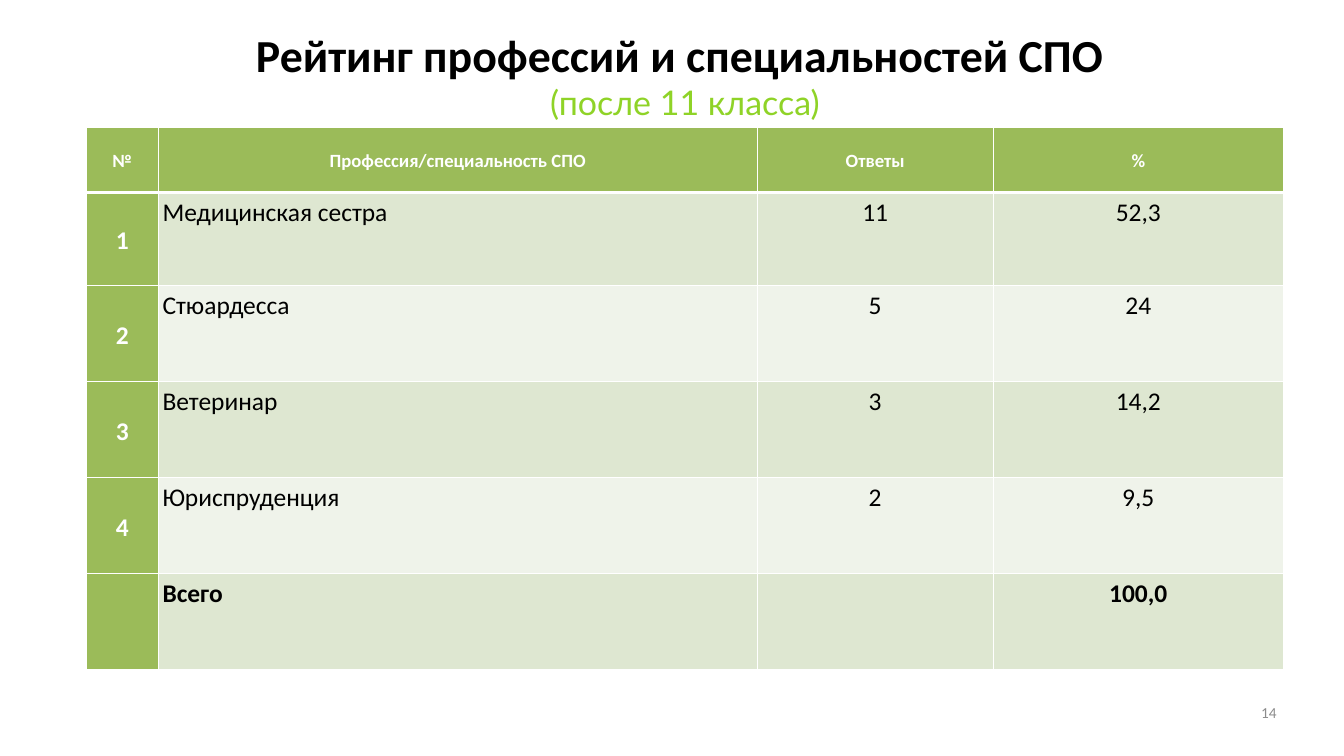
from dataclasses import dataclass

from lxml import etree
from pptx import Presentation
from pptx.dml.color import RGBColor as RGB
from pptx.enum.text import MSO_ANCHOR as ANCHOR, MSO_AUTO_SIZE as FIT, PP_ALIGN as ALIGN
from pptx.oxml.ns import qn
from pptx.util import Inches, Pt


@dataclass(frozen=True)
class Theme:
    font: str = "Calibri"
    accent_font: str = "Lato"
    black: str = "000000"
    white: str = "FFFFFF"
    lime: str = "8FD327"
    grey: str = "8C8C8C"
    green: str = "9BBB59"
    bands: tuple = ("DEE7D1", "EFF3EA")
    title: int = 54
    subtitle: int = 40
    head: int = 22
    body: int = 30
    number: int = 18
    rule: int = 1
    head_rule: int = 3


class RatingSlide:
    def __init__(self, prs, theme):
        self.theme = theme
        self.slide = prs.slides.add_slide(prs.slide_layouts[5])

    def place(self, sp, box):
        for name, value in zip(("left", "top", "width", "height"), box):
            setattr(sp, name, Inches(value))

    def frame(self, tf):
        fmt = dict(word_wrap=True, auto_size=FIT.NONE, vertical_anchor=ANCHOR.TOP,
                   margin_left=0, margin_top=0, margin_right=0, margin_bottom=0)
        for name, value in fmt.items():
            setattr(tf, name, value)

    def run(self, p, text, size, color, bold=False, font=None):
        r = p.add_run()
        r.text = text
        fmt = dict(name=font or self.theme.font, size=Pt(size), bold=bold)
        for name, value in fmt.items():
            setattr(r.font, name, value)
        r.font.color.rgb = RGB.from_string(color)

    def title(self, text, subtitle, box):
        t, sp = self.theme, self.slide.shapes.title
        self.place(sp, box)
        self.frame(sp.text_frame)
        p = sp.text_frame.paragraphs[0]
        p.alignment, p.line_spacing = ALIGN.CENTER, 1.0
        self.run(p, text, t.title, t.black, bold=True)
        p.add_line_break()
        self.run(p, subtitle, t.subtitle, t.lime, font=t.accent_font)

    def number(self, text, box):
        t = self.theme
        sp = self.slide.shapes.add_textbox(*map(Inches, box))
        self.frame(sp.text_frame)
        p = sp.text_frame.paragraphs[0]
        p.alignment = ALIGN.RIGHT
        self.run(p, text, t.number, t.grey)

    def border(self, cell, side, width):
        ln = etree.SubElement(cell._tc.get_or_add_tcPr(), qn(f"a:ln{side}"), w=str(Pt(width)))
        fill = etree.SubElement(ln, qn("a:solidFill"))
        etree.SubElement(fill, qn("a:srgbClr"), val=self.theme.white)

    def cell(self, cell, text, row, col, bold):
        t = self.theme
        head, green = row == 0, row == 0 or col == 0
        fmt = dict(margin_left=Inches(0.07), margin_right=Inches(0.07),
                   margin_top=0, margin_bottom=0,
                   vertical_anchor=ANCHOR.MIDDLE if green else ANCHOR.TOP)
        for name, value in fmt.items():
            setattr(cell, name, value)

        # Borders come before the fill in the cell properties
        thick = {"T": row == 1, "B": head}
        for side in "LRTB":
            self.border(cell, side, t.head_rule if thick.get(side) else t.rule)
        cell.fill.solid()
        fill = t.green if green else t.bands[(row - 1) % 2]
        cell.fill.fore_color.rgb = RGB.from_string(fill)

        p = cell.text_frame.paragraphs[0]
        p.alignment = ALIGN.LEFT if col == 1 and not head else ALIGN.CENTER
        p.line_spacing = 1.15
        if text:
            self.run(p, text, t.head if head else t.body,
                     t.white if green else t.black, bold=green or bold)

    def table(self, rows, box, widths, heights):
        sp = self.slide.shapes.add_table(len(rows), len(widths), *map(Inches, box))
        tbl = sp.table
        for column, width in zip(tbl.columns, widths):
            column.width = Inches(width)
        for line, height in zip(tbl.rows, heights):
            line.height = Inches(height)
        for i, values in enumerate(rows):
            for j, text in enumerate(values):
                self.cell(tbl.cell(i, j), text, i, j, bold=i == len(rows) - 1)


RATING = [
    ("№", "Профессия/специальность СПО", "Ответы", "%"),
    ("1", "Медицинская сестра", "11", "52,3"),
    ("2", "Стюардесса", "5", "24"),
    ("3", "Ветеринар", "3", "14,2"),
    ("4", "Юриспруденция", "2", "9,5"),
    ("", "Всего", "", "100,0"),
]


def main():
    prs = Presentation()
    prs.slide_width, prs.slide_height = Inches(21.99), Inches(12.37)
    s = RatingSlide(prs, Theme())

    # Heading
    s.title("Рейтинг профессий и специальностей СПО ", "(после 11 класса)",
            (1.41, 0.43, 19.59, 1.65))

    # Rating table
    s.table(RATING, (1.41, 2.08, 19.59, 8.87),
            widths=(1.18, 9.8, 3.86, 4.75), heights=[1.07, 1.52] + [1.57] * 4)

    # Slide number
    s.number("14", (15.83, 11.5, 5.06, 0.62))

    prs.save("out.pptx")


if __name__ == "__main__":
    main()
